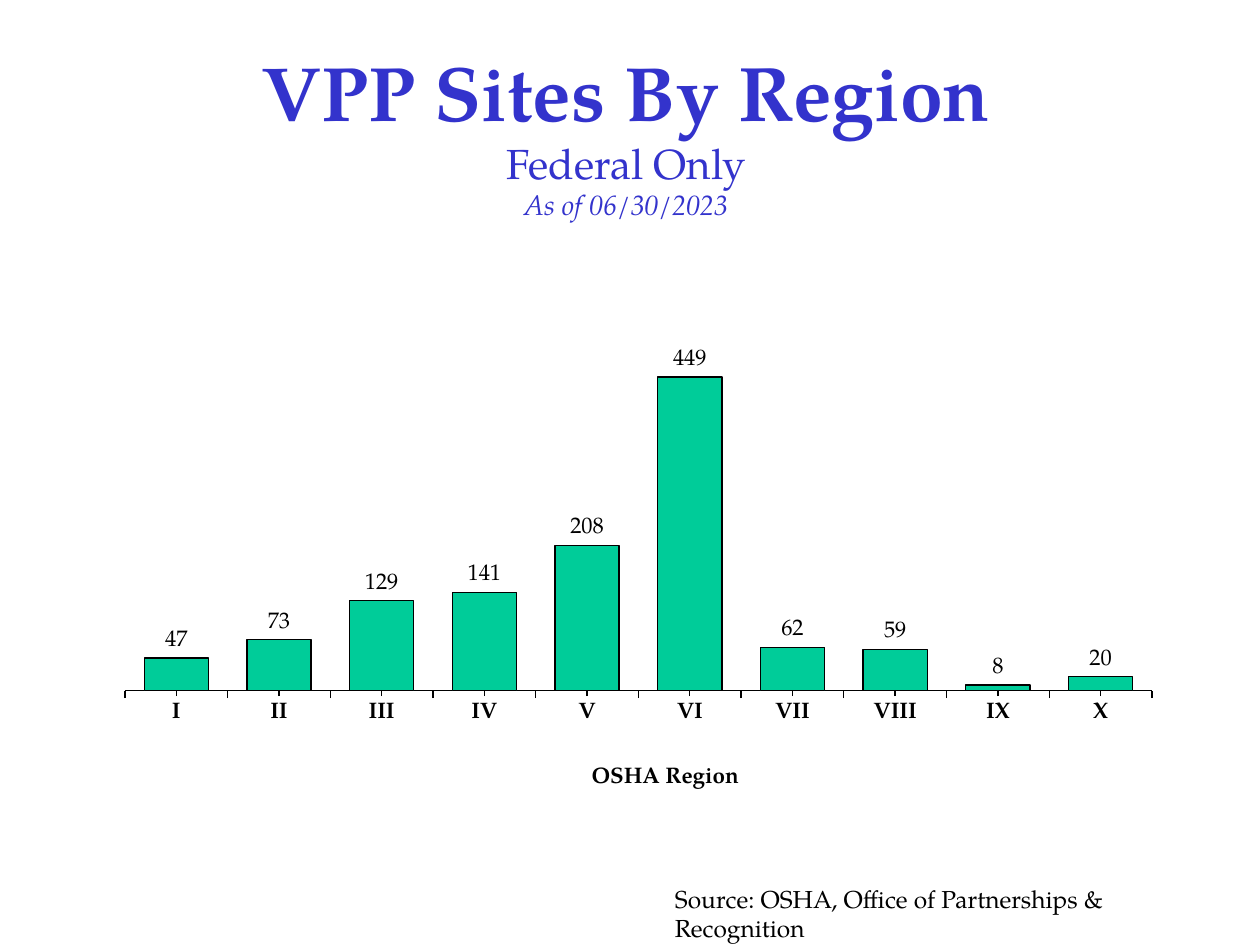
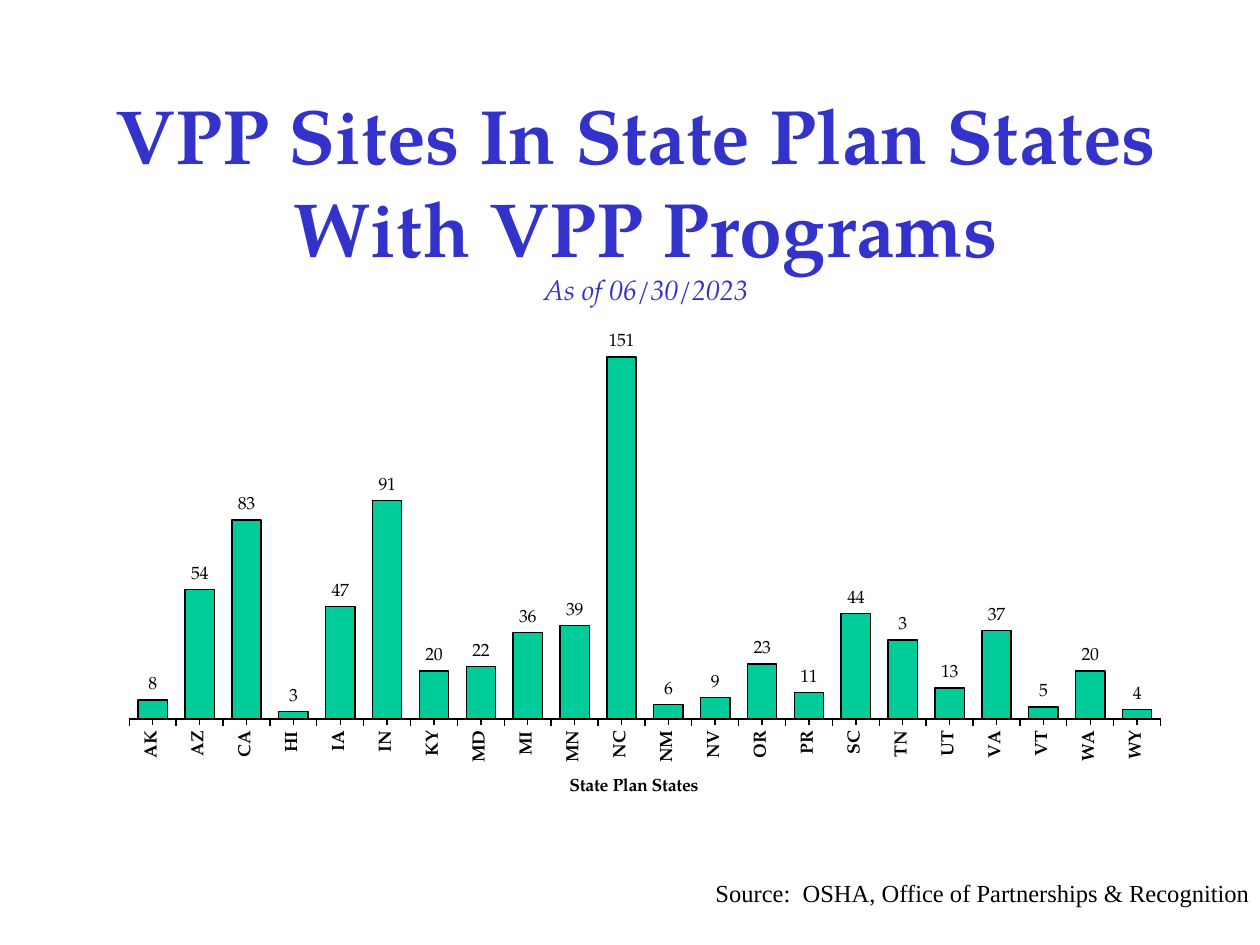
import pptx
import pptx.util
import pptx.chart.data
import pptx.dml.color
import pptx.enum.chart
import pptx.enum.text
import pptx.oxml

PX_PER_INCH = 126
PAGE_SIZE = (1260, 945)
CHART_AREA = (95, 273, 1071, 567)
BODY_FONT = "TeX Gyre Pagella"
TITLE_BLUE, BAR_GREEN, BLACK = "3333CC", "00CC99", "000000"
HEADLINE, SUBHEAD, DATE = (44, True, False), (24, False, False), (16, False, True)
CHART_NS = "http://schemas.openxmlformats.org/drawingml/2006/chart"

SLIDES = [
    dict(
        title_area=(95, 45, 1062, 185),
        title=[("VPP Sites By Region", HEADLINE), ("Federal Only", SUBHEAD),
               ("As of 06/30/2023", DATE)],
        sites={"I": 47, "II": 73, "III": 129, "IV": 141, "V": 208,
               "VI": 449, "VII": 62, "VIII": 59, "IX": 8, "X": 20},
        label_overrides={}, axis_top=500, size=12.8, rotation=0,
        plot=dict(x=0.028, y=0.121, w=0.959, h=0.616),
        axis_title="OSHA Region", axis_title_at=dict(x=0.46, y=0.86),
        source="Source: OSHA, Office of Partnerships & Recognition",
        source_area=(662, 878, 585, 67), source_font=BODY_FONT,
        source_align="LEFT", source_insets=(13, 6)),
    dict(
        title_area=(84, 88, 1124, 225),
        title=[("VPP Sites In State Plan States ", HEADLINE),
               ("With VPP Programs", HEADLINE), ("As of 06/30/2023", DATE)],
        sites={"AK": 8, "AZ": 54, "CA": 83, "HI": 3, "IA": 47, "IN": 91,
               "KY": 20, "MD": 22, "MI": 36, "MN": 39, "NC": 151, "NM": 6,
               "NV": 9, "OR": 23, "PR": 11, "SC": 44, "TN": 33, "UT": 13,
               "VA": 37, "VT": 5, "WA": 20, "WY": 4},
        label_overrides={"TN": "3"}, axis_top=160, size=10.1, rotation=-90,
        plot=dict(x=0.032, y=0.11, w=0.963, h=0.677),
        axis_title="State Plan States", axis_title_at=dict(x=0.44, y=0.885),
        source="Source:  OSHA, Office of Partnerships & Recognition",
        source_area=(672, 878, 578, 64), source_font="Times New Roman",
        source_align="RIGHT", source_insets=(0, 0)),
]


def emu(*lengths):
    return [pptx.util.Emu(round(length * 914400 / PX_PER_INCH)) for length in lengths]


def style(font, size, color=BLACK, name=BODY_FONT, bold=False, italic=False):
    font.size = pptx.util.Pt(size)
    font.color.rgb = pptx.dml.color.RGBColor.from_string(color)
    font.name = name
    font.bold = bold
    font.italic = italic


deck = pptx.Presentation()
deck.slide_width, deck.slide_height = emu(*PAGE_SIZE)

for content in SLIDES:
    page = deck.slides.add_slide(deck.slide_layouts[6])

    # Title
    box = page.shapes.add_textbox(*emu(*content["title_area"]))
    frame = box.text_frame
    frame.word_wrap = True
    frame.margin_left = frame.margin_right = frame.margin_top = frame.margin_bottom = 0
    frame.text = "\n".join(line for line, look in content["title"])
    for para, (line, (size, bold, italic)) in zip(frame.paragraphs, content["title"]):
        para.alignment = pptx.enum.text.PP_ALIGN.CENTER
        style(para.runs[0].font, size, TITLE_BLUE, bold=bold, italic=italic)

    # Chart
    sites, size = content["sites"], content["size"]
    data = pptx.chart.data.CategoryChartData()
    data.categories = list(sites)
    data.add_series("Series 1", list(sites.values()))
    chart = page.shapes.add_chart(
        pptx.enum.chart.XL_CHART_TYPE.COLUMN_CLUSTERED, *emu(*CHART_AREA), data).chart
    chart.has_legend = False
    chart.has_title = False
    style(chart.font, size, bold=True)

    plot = chart.plots[0]
    plot.gap_width = 60
    plot.vary_by_categories = False
    bars = plot.series[0]
    bars.format.fill.solid()
    bars.format.fill.fore_color.rgb = pptx.dml.color.RGBColor.from_string(BAR_GREEN)
    labels = bars.data_labels
    labels.show_value = True
    labels.position = pptx.enum.chart.XL_LABEL_POSITION.OUTSIDE_END
    style(labels.font, size)
    for category, wording in content["label_overrides"].items():
        label = bars.points[list(sites).index(category)].data_label
        label.text_frame.text = wording
        label.position = pptx.enum.chart.XL_LABEL_POSITION.OUTSIDE_END
        style(label.text_frame.paragraphs[0].runs[0].font, size)

    # Axes
    value_axis, category_axis = chart.value_axis, chart.category_axis
    value_axis.minimum_scale, value_axis.maximum_scale = 0, content["axis_top"]
    value_axis.has_major_gridlines = False
    value_axis.major_tick_mark = pptx.enum.chart.XL_TICK_MARK.NONE
    value_axis.tick_label_position = pptx.enum.chart.XL_TICK_LABEL_POSITION.NONE
    value_axis.format.line.fill.background()
    category_axis.major_tick_mark = pptx.enum.chart.XL_TICK_MARK.OUTSIDE
    category_axis.minor_tick_mark = pptx.enum.chart.XL_TICK_MARK.OUTSIDE
    category_axis.tick_label_position = pptx.enum.chart.XL_TICK_LABEL_POSITION.LOW
    style(category_axis.tick_labels.font, size, bold=True)
    if content["rotation"]:
        body = category_axis._element.txPr.bodyPr
        body.set("rot", str(content["rotation"] * 60000))
        body.set("vert", "horz")
    for outlined in (bars, category_axis):
        outlined.format.line.color.rgb = pptx.dml.color.RGBColor.from_string(BLACK)
        outlined.format.line.width = pptx.util.Pt(0.8)
    axis_title = category_axis.axis_title
    axis_title.text_frame.text = content["axis_title"]
    style(axis_title.text_frame.paragraphs[0].runs[0].font, size, bold=True)

    # Fixed places for the plot area and the axis title
    for parent, index, target, place in (
            (chart._chartSpace.chart.plotArea, 0, '<c:layoutTarget val="inner"/>',
             content["plot"]),
            (axis_title._element, 1, "", content["axis_title_at"])):
        for automatic in parent.findall("{%s}layout" % CHART_NS):
            parent.remove(automatic)
        modes = '<c:xMode val="edge"/><c:yMode val="edge"/>'
        values = "".join(f'<c:{key} val="{part}"/>' for key, part in place.items())
        parent.insert(index, pptx.oxml.parse_xml(
            f'<c:layout xmlns:c="{CHART_NS}"><c:manualLayout>'
            f'{target}{modes}{values}</c:manualLayout></c:layout>'))

    # Source line
    box = page.shapes.add_textbox(*emu(*content["source_area"]))
    frame = box.text_frame
    frame.word_wrap = True
    side, edge = emu(*content["source_insets"])
    frame.margin_left = frame.margin_right = side
    frame.margin_top = frame.margin_bottom = edge
    frame.text = content["source"]
    para = frame.paragraphs[0]
    para.alignment = pptx.enum.text.PP_ALIGN[content["source_align"]]
    style(para.runs[0].font, 14, name=content["source_font"])

deck.save("out.pptx")
